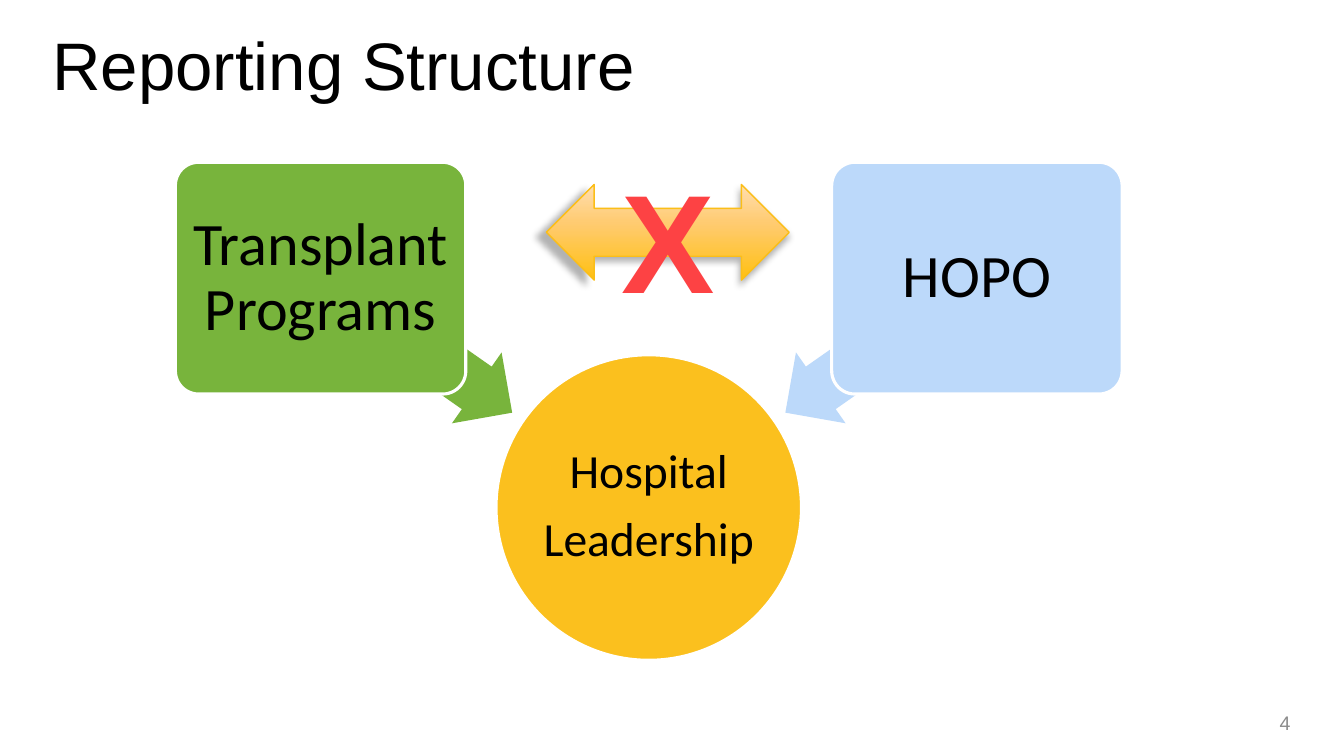
from copy import deepcopy

from lxml.etree import SubElement
from pptx import Presentation
from pptx.dml.color import RGBColor
from pptx.enum.shapes import MSO_SHAPE
from pptx.enum.text import MSO_ANCHOR, PP_ALIGN
from pptx.oxml.ns import qn
from pptx.util import Cm, Pt

GREEN, BLUE, GOLD, RED = "78B43C", "BCD9FA", "FBC01E", "FD4244"
BLACK, GREY, WHITE = "000000", "8C8C8C", "FFFFFF"


def color(hex_string):
    return RGBColor.from_string(hex_string)


def write(shape, text, size, font, hex_color=BLACK, align=PP_ALIGN.CENTER,
          anchor=MSO_ANCHOR.MIDDLE, bold=False, margins=(0.25, 0.13), spacing=None):
    frame = shape.text_frame
    frame.word_wrap = True
    frame.vertical_anchor = anchor
    frame.margin_left = frame.margin_right = Cm(margins[0])
    frame.margin_top = frame.margin_bottom = Cm(margins[1])
    frame.text = text
    for paragraph in frame.paragraphs:
        paragraph.alignment = align
        if spacing:
            paragraph.line_spacing = spacing
            paragraph.space_after = Pt(size * 0.35)
        for run in paragraph.runs:
            run.font.size = Pt(size)
            run.font.name = font
            run.font.bold = bold
            run.font.color.rgb = color(hex_color)


def add_text(slide, box, text, size, **style):
    textbox = slide.shapes.add_textbox(*map(Cm, box))
    write(textbox, text, size, "Arial", **style)


def add_block(slide, kind, box, fill, outlined=True):
    shape = slide.shapes.add_shape(kind, *map(Cm, box))
    shape.shadow.inherit = False
    shape.fill.solid()
    shape.fill.fore_color.rgb = color(fill)
    if outlined:
        shape.line.color.rgb = color(WHITE)
        shape.line.width = Pt(2.25)
    else:
        shape.line.fill.background()
    return shape


def add_leadership(slide, box):
    circle = add_block(slide, MSO_SHAPE.OVAL, box, GOLD)
    write(circle, "Hospital\nLeadership", 34, "Calibri", margins=(0.05, 0.05), spacing=0.9)


def add_unit(slide, box, text, fill, arrow_offset, rotation):
    """A rounded box with an arrow behind it that points to the circle."""
    left, top, width, height = box
    arrow_box = (left + arrow_offset, top + 3.53, 5.89, 2.18)
    arrow = add_block(slide, MSO_SHAPE.LEFT_ARROW, arrow_box, fill, outlined=False)
    arrow.adjustments[0], arrow.adjustments[1] = 0.6, 0.5
    arrow.rotation = rotation
    card = add_block(slide, MSO_SHAPE.ROUNDED_RECTANGLE, box, fill)
    card.adjustments[0] = 0.1
    write(card, text, 43, "Calibri", margins=(0.23, 0.23), spacing=0.9)


def add_blocked_link(slide, box):
    """A two-way arrow crossed out by a large X."""
    left, top, width, height = box
    arrow = slide.shapes.add_shape(MSO_SHAPE.LEFT_RIGHT_ARROW, *map(Cm, box))
    arrow.line.color.rgb = color("FBBE18")
    arrow.line.width = Pt(1)

    # Three-stop gradient, deep at the bottom
    arrow.fill.gradient()
    arrow.fill.gradient_angle = 90
    stop_list = arrow._element.spPr.find(qn("a:gradFill")).find(qn("a:gsLst"))
    stop_list.append(deepcopy(stop_list[-1]))
    stops = ((0, "FFC011"), (0.6, "FFCB71"), (1, "FFDEB0"))
    for stop, (position, hex_color) in zip(arrow.fill.gradient_stops, stops):
        stop.position = position
        stop.color.rgb = color(hex_color)

    # Soft shadow, a little wider to the left
    arrow.shadow.inherit = False
    effects = arrow._element.spPr.find(qn("a:effectLst"))
    shadow = SubElement(effects, qn("a:outerShdw"), blurRad=str(Pt(5)), dist=str(Pt(3)),
                        dir="5400000", sx="104000", algn="r", rotWithShape="0")
    shade = SubElement(shadow, qn("a:srgbClr"), val=BLACK)
    SubElement(shade, qn("a:alpha"), val="30000")

    add_text(slide, (left - 2.29, top - 0.92, 10.7, 4.52), "X", 100,
             hex_color=RED, bold=True, anchor=MSO_ANCHOR.TOP)


def main():
    presentation = Presentation()
    presentation.slide_width, presentation.slide_height = Cm(33.87), Cm(19.05)
    slide = presentation.slides.add_slide(presentation.slide_layouts[6])

    # Diagram
    add_leadership(slide, (12.5, 8.94, 7.7, 7.7))
    add_unit(slide, (4.42, 4.09, 7.32, 5.84), "Transplant Programs", GREEN, 3.13, 215)
    add_unit(slide, (20.96, 4.09, 7.32, 5.84), "HOPO", BLUE, -1.7, 325)

    # Title and slide number
    add_text(slide, (1.07, 0.43, 32.36, 2.36), "Reporting Structure", 48, align=PP_ALIGN.LEFT)
    add_text(slide, (27.03, 17.7, 5.74, 1.02), "4", 14, hex_color=GREY, align=PP_ALIGN.RIGHT)

    add_blocked_link(slide, (13.77, 4.65, 6.12, 2.41))
    presentation.save("out.pptx")


if __name__ == "__main__":
    main()
